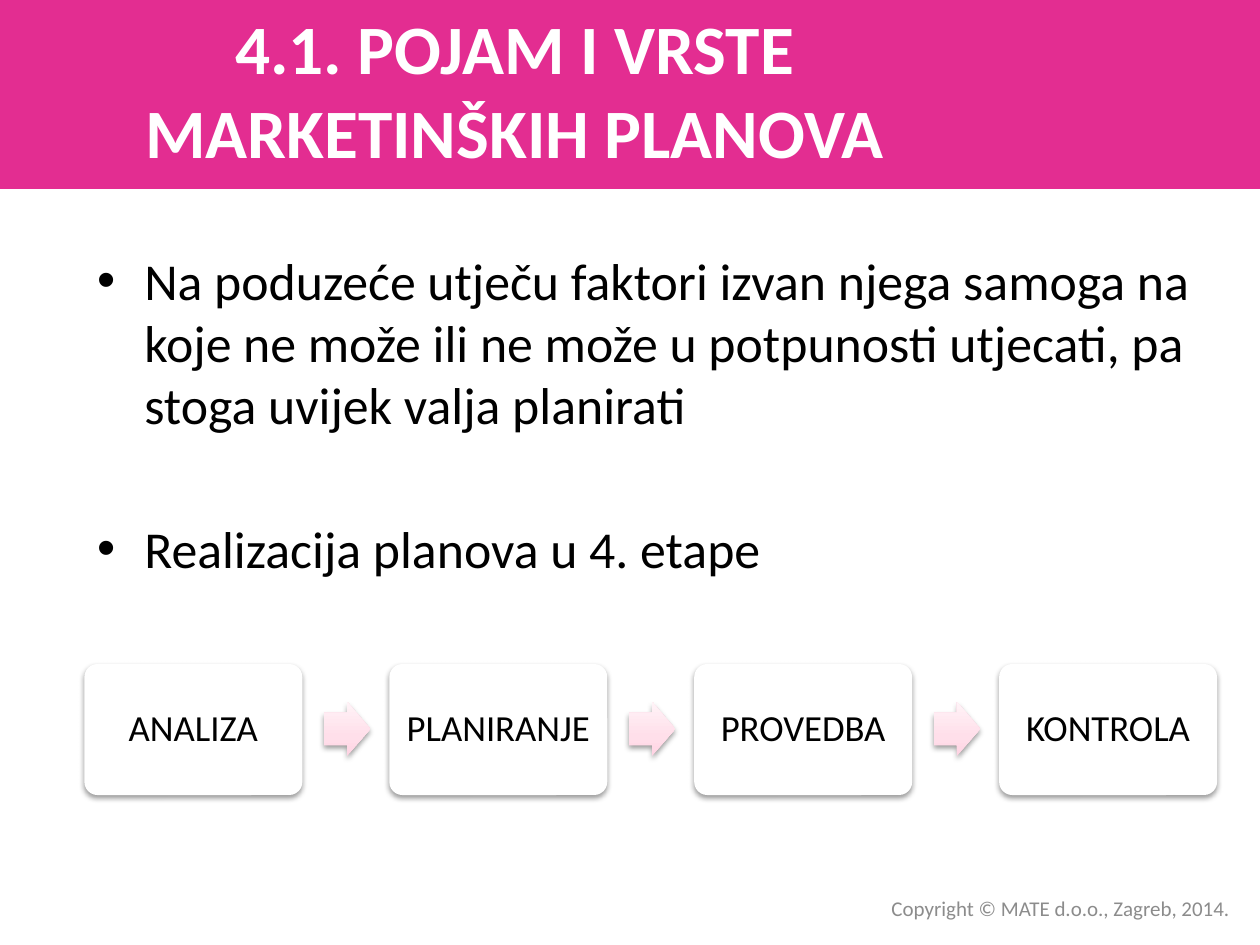
from dataclasses import dataclass

import lxml.etree
import pptx
import pptx.dml.color
import pptx.enum.shapes
import pptx.enum.text
import pptx.oxml.ns
import pptx.util
from pptx.util import Inches

Shapes = pptx.enum.shapes.MSO_SHAPE
Align = pptx.enum.text.PP_ALIGN
Anchor = pptx.enum.text.MSO_ANCHOR
qn = pptx.oxml.ns.qn


@dataclass(frozen=True)
class Theme:
    font: str = "Calibri"
    band: str = "E32D91"
    white: str = "FFFFFF"
    black: str = "000000"
    gray: str = "8C8C8C"
    arrow_stops: tuple = ((0, "FFD3E3"), (35, "FFDFEA"), (100, "FFF3F7"))
    title_size: float = 39.6
    body_size: float = 29.6
    stage_size: float = 21
    footer_size: float = 12


@dataclass(frozen=True)
class Box:
    left: float
    top: float
    width: float
    height: float

    def lengths(self) -> tuple:
        return tuple(Inches(value) for value in (self.left, self.top, self.width, self.height))


THEME = Theme()
TITLE = "4.1. POJAM I VRSTE MARKETINŠKIH PLANOVA"
BULLETS = (
    "Na poduzeće utječu faktori izvan njega samoga na koje ne može "
    "ili ne može u potpunosti utjecati, pa stoga uvijek valja planirati",
    "Realizacija planova u 4. etape",
)
FOOTER = "Copyright © MATE d.o.o., Zagreb, 2014."
STAGES = ("ANALIZA", "PLANIRANJE", "PROVEDBA", "KONTROLA")
FIRST_STAGE = Box(0.67, 5.27, 1.73, 1.04)
FIRST_ARROW = Box(2.57, 5.57, 0.37, 0.43)
STAGE_PITCH = 2.42


def rgb(color: str) -> pptx.dml.color.RGBColor:
    return pptx.dml.color.RGBColor.from_string(color)


def place(shape, box: Box) -> None:
    shape.left, shape.top, shape.width, shape.height = box.lengths()


def format_text(frame, size: float, color: str, align, anchor, bold: bool = False) -> None:
    frame.word_wrap = True
    frame.auto_size = pptx.enum.text.MSO_AUTO_SIZE.NONE
    frame.vertical_anchor = anchor
    for paragraph in frame.paragraphs:
        paragraph.alignment = align
        for run in paragraph.runs:
            run.font.name = THEME.font
            run.font.size = pptx.util.Pt(size)
            run.font.bold = bold
            run.font.color.rgb = rgb(color)


def add_plain_shape(slide, kind, box: Box, color: str):
    shape = slide.shapes.add_shape(kind, *box.lengths())
    shape.shadow.inherit = False
    shape.fill.solid()
    shape.fill.fore_color.rgb = rgb(color)
    shape.line.fill.background()
    return shape


def add_shadow(shape) -> None:
    """Give the shape a soft black shadow falling straight down."""
    effects = shape._element.spPr.find(qn("a:effectLst"))
    shadow = lxml.etree.SubElement(
        effects, qn("a:outerShdw"), blurRad="40000", dist="20000", dir="5400000", rotWithShape="0"
    )
    color = lxml.etree.SubElement(shadow, qn("a:srgbClr"), val=THEME.black)
    lxml.etree.SubElement(color, qn("a:alpha"), val="38000")


def fill_upward_gradient(shape, stops: tuple) -> None:
    shape.fill.gradient()
    shape.fill.gradient_angle = 90
    stop_list = shape._element.spPr.find(qn("a:gradFill")).find(qn("a:gsLst"))
    for old_stop in list(stop_list):
        stop_list.remove(old_stop)
    for position, color in stops:
        stop = lxml.etree.SubElement(stop_list, qn("a:gs"), pos=str(position * 1000))
        lxml.etree.SubElement(stop, qn("a:srgbClr"), val=color)


def add_stage(slide, label: str, box: Box) -> None:
    stage = add_plain_shape(slide, Shapes.ROUNDED_RECTANGLE, box, THEME.white)
    stage.adjustments[0] = 0.1
    add_shadow(stage)
    frame = stage.text_frame
    frame.margin_left = frame.margin_right = Inches(0.04)
    frame.text = label
    frame.paragraphs[0].line_spacing = 0.9
    format_text(frame, THEME.stage_size, THEME.black, Align.CENTER, Anchor.MIDDLE)


def add_arrow(slide, box: Box) -> None:
    arrow = add_plain_shape(slide, Shapes.RIGHT_ARROW, box, THEME.white)
    arrow.adjustments[0] = 0.6
    arrow.adjustments[1] = 0.5
    fill_upward_gradient(arrow, THEME.arrow_stops)
    add_shadow(arrow)


def shifted(box: Box, steps: int) -> Box:
    return Box(box.left + steps * STAGE_PITCH, box.top, box.width, box.height)


def add_process(slide) -> None:
    for index, label in enumerate(STAGES):
        add_stage(slide, label, shifted(FIRST_STAGE, index))
        if index < len(STAGES) - 1:
            add_arrow(slide, shifted(FIRST_ARROW, index))


def add_title(slide) -> None:
    band = add_plain_shape(slide, Shapes.RECTANGLE, Box(0, 0, 10, 1.5), THEME.band)
    title = slide.shapes.title
    title._element.addprevious(band._element)
    place(title, Box(0, 0.08, 8.17, 1.25))
    title.text_frame.text = TITLE
    format_text(title.text_frame, THEME.title_size, THEME.white, Align.CENTER, Anchor.MIDDLE, bold=True)


def add_bullets(slide) -> None:
    body = slide.placeholders[1]
    place(body, Box(0.67, 1.92, 9, 2.94))
    frame = body.text_frame
    frame.text = "\n".join(BULLETS)
    first, second = frame.paragraphs
    first.space_before = pptx.util.Pt(0)
    second.space_before = pptx.util.Pt(47)
    format_text(frame, THEME.body_size, THEME.black, Align.LEFT, Anchor.TOP)


def add_footer(slide) -> None:
    footer = slide.shapes.add_textbox(*Box(4.69, 7.06, 5.17, 0.3).lengths())
    footer.text_frame.text = FOOTER
    format_text(footer.text_frame, THEME.footer_size, THEME.gray, Align.RIGHT, Anchor.MIDDLE)


def main() -> None:
    presentation = pptx.Presentation()
    presentation.slide_width = Inches(10)
    presentation.slide_height = Inches(7.5)
    slide = presentation.slides.add_slide(presentation.slide_layouts[1])
    add_title(slide)
    add_bullets(slide)
    add_footer(slide)
    add_process(slide)
    presentation.save("out.pptx")


if __name__ == "__main__":
    main()
